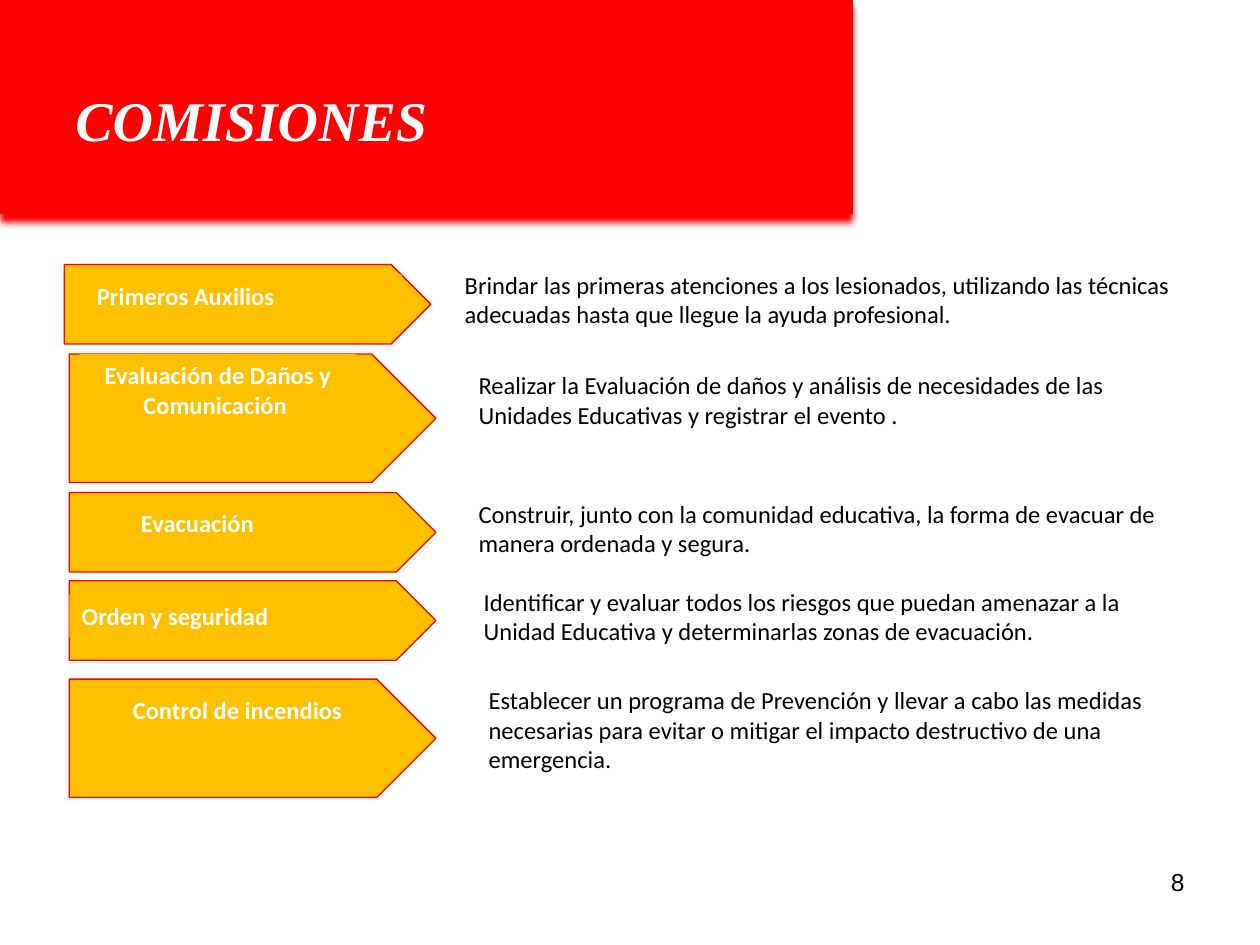
import pptx
import pptx.dml.color
import pptx.enum.shapes
import pptx.enum.text
import pptx.oxml
import pptx.oxml.ns
import pptx.util

RGB = pptx.dml.color.RGBColor
RED = RGB(0xFF, 0x00, 0x00)
GOLD = RGB(0xFF, 0xC0, 0x00)
WHITE = RGB(0xFF, 0xFF, 0xFF)
BLACK = RGB(0x00, 0x00, 0x00)

KIND = pptx.enum.shapes.MSO_SHAPE
ALIGN = pptx.enum.text.PP_ALIGN
LEFT, MID, RIGHT = ALIGN.LEFT, ALIGN.CENTER, ALIGN.RIGHT

# The slide is a grid of 100 columns by 75 rows
WIDE, HIGH = pptx.util.Inches(10), pptx.util.Inches(7.5)
COL, ROW = WIDE / 100, HIGH / 75

# Arrow box, label, label box, label alignment, note, note box;
# the label and note boxes are offsets from the arrow's corner
TEAMS = [
    ((5.1, 21, 29.1, 6.3), "Primeros Auxilios", (1.6, 0.8, 25.2, 3.4), LEFT,
     "Brindar las primeras atenciones a los lesionados, utilizando las "
     "técnicas adecuadas hasta que llegue la ayuda profesional.",
     (30.8, -0.1, 58.3, 5.7)),
    ((5.5, 28.1, 29.1, 10.2), "Evaluación de Daños y Comunicación ",
     (0.8, 0, 22, 5.7), MID,
     "Realizar la Evaluación de daños y análisis de necesidades de las "
     "Unidades Educativas y registrar el evento .",
     (31.5, 0.8, 56.7, 5.7)),
    ((5.5, 39.1, 29.1, 6.3), "Evacuación", (4.7, 0.7, 18.1, 3.4), LEFT,
     "Construir, junto con la comunidad educativa, la forma de evacuar de "
     "manera ordenada y segura.",
     (31.5, 0, 58.3, 5.7)),
    ((5.5, 46.1, 29.1, 6.3), "Orden y seguridad", (0, 1.1, 26.8, 3.4), LEFT,
     "Identificar y evaluar todos los riesgos que puedan amenazar a la "
     "Unidad Educativa y determinarlas zonas de evacuación.",
     (31.9, 0, 57.8, 5.7)),
    ((5.5, 53.9, 29.1, 9.4), "Control de incendios",
     (3.1, 0.8, 20.5, 5.7), MID,
     "Establecer un programa de Prevención y llevar a cabo las medidas "
     "necesarias para evitar o mitigar el impacto destructivo de una "
     "emergencia.",
     (32.3, 0, 56.7, 8.1)),
]


def scale(box):
    """Turn columns and rows into slide lengths."""
    x, y, w, h = box
    return int(x * COL), int(y * ROW), int(w * COL), int(h * ROW)


def shift(box, part):
    """Place a part relative to the corner of a box."""
    return box[0] + part[0], box[1] + part[1], part[2], part[3]


def shape(slide, kind, box, fill, line=None):
    item = slide.shapes.add_shape(kind, *scale(box))
    item.shadow.inherit = False
    item.fill.solid()
    item.fill.fore_color.rgb = fill
    if line is None:
        item.line.fill.background()
    else:
        item.line.color.rgb = line
        item.line.width = pptx.util.Pt(0.75)
    return item


def write(slide, text, box, size=14, face="Calibri", color=BLACK,
          bold=False, slant=False, align=LEFT, fill=None, top=0.05):
    item = slide.shapes.add_textbox(*scale(box))
    if fill is not None:
        item.fill.solid()
        item.fill.fore_color.rgb = fill
    frame = item.text_frame
    frame.word_wrap = True
    frame.margin_top = pptx.util.Inches(top)
    para = frame.paragraphs[0]
    para.text = text
    para.alignment = align
    font = para.font
    font.name, font.size = face, pptx.util.Pt(size)
    font.bold, font.italic = bold, slant
    font.color.rgb = color


def glow(item, color):
    """Add a soft shadow straight below a shape."""
    space = pptx.oxml.ns.nsdecls("a")
    gap = pptx.util.Pt(4)
    old = item._element.spPr.find(pptx.oxml.ns.qn("a:effectLst"))
    old.append(pptx.oxml.parse_xml(
        f'<a:outerShdw {space} blurRad="{gap}" dist="{gap}" dir="5400000" '
        f'rotWithShape="0"><a:srgbClr val="{color}"/></a:outerShdw>'))


def head(slide, box, text):
    """Red banner with the title."""
    band = shape(slide, KIND.ROUNDED_RECTANGLE, box, RED)
    band.adjustments[0] = 0
    glow(band, RED)
    write(slide, text, shift(box, (5, 5.7, 34.2, 5)), size=32,
          face="Times New Roman", color=WHITE, bold=True, slant=True, top=0.11)


def team(slide, box, label, tag, align, note, side):
    """Arrow with its label, and the duty beside it."""
    shape(slide, KIND.PENTAGON, box, GOLD, line=RED)
    write(slide, label, shift(box, tag), color=WHITE, bold=True,
          align=align, fill=GOLD)
    write(slide, note, shift(box, side))


def foot(slide, box, text):
    """Page number."""
    write(slide, text, box, face="Arial", align=RIGHT)


def main():
    deck = pptx.Presentation()
    deck.slide_width, deck.slide_height = WIDE, HIGH
    slide = deck.slides.add_slide(deck.slide_layouts[6])
    head(slide, (0, 0, 67.7, 17), "COMISIONES")
    for row in TEAMS:
        team(slide, *row)
    foot(slide, (71.7, 68.3, 23.3, 5.2), "8")
    deck.save("out.pptx")


if __name__ == "__main__":
    main()
